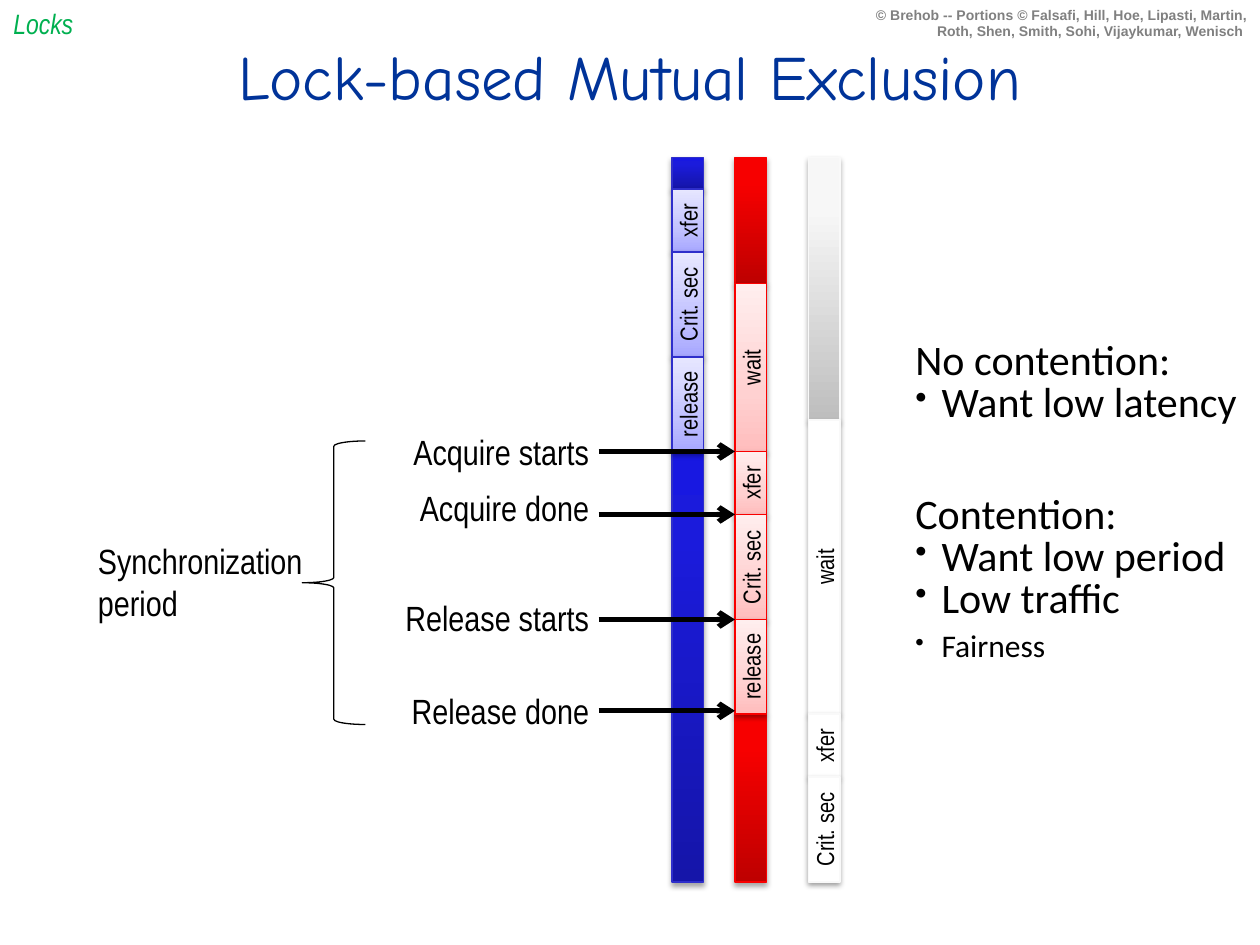
import copy
from dataclasses import dataclass
from typing import Optional

import lxml.etree
import pptx
import pptx.dml.color
import pptx.enum.shapes
import pptx.enum.text
import pptx.oxml
import pptx.oxml.ns
import pptx.util

COLUMNS = 120
SLIDE_WIDTH = pptx.util.Inches(10)
SLIDE_HEIGHT = pptx.util.Inches(7.5)
ALIGN = pptx.enum.text.PP_ALIGN
ANCHOR = pptx.enum.text.MSO_ANCHOR
SHAPES = pptx.enum.shapes.MSO_SHAPE
NARROW = "Arial Narrow"
BLACK = "000000"
BAR_WIDTH = 3


@dataclass(frozen=True)
class Style:
    font: str = NARROW
    size: float = 20
    color: str = BLACK
    bold: bool = False
    italic: bool = False


@dataclass(frozen=True)
class Box:
    left: float
    top: float
    width: float
    height: float


@dataclass(frozen=True)
class Thread:
    column: int
    line: str
    solid: tuple
    light: tuple
    running: tuple
    phases: tuple


@dataclass(frozen=True)
class Event:
    text: str
    label_row: float
    arrow_row: float


@dataclass(frozen=True)
class Note:
    text: str
    bullet: bool = False
    space_before: float = 0
    size: float = 24


THREADS = (
    Thread(64, "2E2ECB", ("1515A9", "1B1BDC", "1818E1"), ("A7A7FF", "C1C1FF", "E7E7FF"),
           ((15, 18), (43, 84)),
           (("xfer", 18, 24), ("Crit. sec", 24, 34), ("release", 34, 43))),
    Thread(70, "F90000", ("BE0000", "F70000", "F80000"), ("FFBDBD", "FFD1D1", "FFEEEE"),
           ((68, 84), (15, 27)),
           (("wait", 27, 43), ("xfer", 43, 49), ("Crit. sec", 49, 59), ("release", 59, 68))),
    Thread(77, "F9F9F9", ("BEBEBE", "F7F7F7", "F8F8F8"), ("FFFFFF",),
           ((15, 40),),
           (("wait", 40, 68), ("xfer", 68, 74), ("Crit. sec", 74, 84))),
)

EVENTS = (
    Event("Acquire starts", 43.1, 43),
    Event("Acquire done", 48.4, 49),
    Event("Release starts", 58.9, 59),
    Event("Release done", 67.7, 67.7),
)

NOTES = (
    Note("No contention:", space_before=15),
    Note("Want low latency", bullet=True),
    Note("Contention:", space_before=40),
    Note("Want low period", bullet=True),
    Note("Low traffic", bullet=True),
    Note("Fairness", bullet=True, size=18),
)


def grid(cells: float) -> int:
    return round(SLIDE_WIDTH * cells / COLUMNS)


def place(box: Box) -> tuple:
    return grid(box.left), grid(box.top), grid(box.width), grid(box.height)


def rgb(color: str):
    return pptx.dml.color.RGBColor.from_string(color)


def add_run(paragraph, text: str, style: Style) -> None:
    run = paragraph.add_run()
    run.text = text
    run.font.name = style.font
    run.font.size = pptx.util.Pt(style.size)
    run.font.bold = style.bold
    run.font.italic = style.italic
    run.font.color.rgb = rgb(style.color)


def add_text(slide, box: Box, lines: tuple, style: Style, wrap: bool = False) -> None:
    frame = slide.shapes.add_textbox(*place(box)).text_frame
    frame.word_wrap = wrap
    for index, (text, alignment) in enumerate(lines):
        paragraph = frame.add_paragraph() if index else frame.paragraphs[0]
        paragraph.alignment = alignment
        add_run(paragraph, text, style)


def set_fill(shape, colors: tuple, middle: float) -> None:
    if len(colors) == 1:
        shape.fill.solid()
        shape.fill.fore_color.rgb = rgb(colors[0])
        return
    shape.fill.gradient()
    shape.fill.gradient_angle = 90
    stops = shape._element.spPr.find(".//" + pptx.oxml.ns.qn("a:gsLst"))
    stops.append(copy.deepcopy(stops[0]))
    for stop, color, position in zip(shape.fill.gradient_stops, colors, (0, middle, 1)):
        stop.color.rgb = rgb(color)
        stop.position = position


def add_shadow(shape, opacity: int, distance: float) -> None:
    shape.shadow.inherit = False
    effects = shape._element.spPr.find(pptx.oxml.ns.qn("a:effectLst"))
    shadow = lxml.etree.SubElement(
        effects, pptx.oxml.ns.qn("a:outerShdw"),
        blurRad=str(pptx.util.Pt(3.1)), dist=str(pptx.util.Pt(distance)),
        dir="5400000", rotWithShape="0")
    color = lxml.etree.SubElement(shadow, pptx.oxml.ns.qn("a:srgbClr"), val=BLACK)
    lxml.etree.SubElement(color, pptx.oxml.ns.qn("a:alpha"), val=str(opacity * 1000))


def add_segment(slide, thread: Thread, top: int, bottom: int, text: Optional[str] = None) -> None:
    box = Box(thread.column, top, BAR_WIDTH, bottom - top)
    shape = slide.shapes.add_shape(SHAPES.RECTANGLE, *place(box))
    shape.line.color.rgb = rgb(thread.line)
    shape.line.width = pptx.util.Pt(0.75)
    if text is None:
        set_fill(shape, thread.solid, 0.8)
        add_shadow(shape, 35, 1.8)
        return
    set_fill(shape, thread.light, 0.35)
    add_shadow(shape, 38, 1.6)
    frame = shape.text_frame
    frame.margin_left = frame.margin_right = frame.margin_top = frame.margin_bottom = 0
    frame.vertical_anchor = ANCHOR.MIDDLE
    frame._txBody.bodyPr.set("vert", "vert270")
    frame.paragraphs[0].alignment = ALIGN.CENTER
    add_run(frame.paragraphs[0], text, Style(size=14))


def add_thread(slide, thread: Thread) -> None:
    for top, bottom in thread.running:
        add_segment(slide, thread, top, bottom)
    for text, top, bottom in thread.phases:
        add_segment(slide, thread, top, bottom, text)


def add_event(slide, event: Event) -> None:
    label = Box(35.9, event.label_row - 2.65, 21.4, 5.3)
    add_text(slide, label, ((event.text, ALIGN.RIGHT),), Style())
    row = grid(event.arrow_row)
    arrow = slide.shapes.add_connector(
        pptx.enum.shapes.MSO_CONNECTOR.STRAIGHT, grid(57), row, grid(70), row)
    arrow.line.color.rgb = rgb(BLACK)
    arrow.line.width = pptx.util.Pt(3)
    lxml.etree.SubElement(arrow.line._get_or_add_ln(), pptx.oxml.ns.qn("a:tailEnd"), type="arrow")
    lxml.etree.SubElement(arrow._element.spPr, pptx.oxml.ns.qn("a:effectLst"))


def add_brace(slide, box: Box) -> None:
    brace = slide.shapes.add_shape(SHAPES.LEFT_BRACE, *place(box))
    brace.shadow.inherit = False
    brace.fill.background()
    brace.line.color.rgb = rgb(BLACK)
    brace.line.width = pptx.util.Pt(0.75)


def add_notes(slide, box: Box, notes: tuple) -> None:
    frame = slide.shapes.add_textbox(*place(box)).text_frame
    frame.word_wrap = True
    for index, note in enumerate(notes):
        paragraph = frame.add_paragraph() if index else frame.paragraphs[0]
        paragraph.line_spacing = pptx.util.Pt(24)
        paragraph.space_before = pptx.util.Pt(note.space_before)
        properties = paragraph._p.get_or_add_pPr()
        properties.set("marL", str(grid(2.5)))
        properties.set("indent", str(-grid(2.5)))
        if note.bullet:
            lxml.etree.SubElement(properties, pptx.oxml.ns.qn("a:buSzPct"), val="80000")
            lxml.etree.SubElement(properties, pptx.oxml.ns.qn("a:buChar"), char="•")
        add_run(paragraph, note.text, Style("Calibri", note.size))


def main() -> None:
    presentation = pptx.Presentation()
    presentation.slide_width = SLIDE_WIDTH
    presentation.slide_height = SLIDE_HEIGHT
    slide = presentation.slides.add_slide(presentation.slide_layouts[6])
    credit = ("© Brehob -- Portions © Falsafi, Hill, Hoe, Lipasti, Martin, "
              "Roth, Shen, Smith, Sohi, Vijaykumar, Wenisch ")
    add_text(slide, Box(82, 0, 38, 4.4), ((credit, ALIGN.RIGHT),),
             Style("Arial", 8, "808080", bold=True), wrap=True)
    add_text(slide, Box(4.5, 3, 111, 8), (("Lock-based Mutual Exclusion", ALIGN.CENTER),),
             Style("Comic Neue", 36, "003399"), wrap=True)
    for thread in THREADS:
        add_thread(slide, thread)
    for event in EVENTS:
        add_event(slide, event)
    add_brace(slide, Box(28.8, 42, 6, 27))
    add_text(slide, Box(5.9, 50.8, 24.1, 9.2),
             (("Synchronization", ALIGN.RIGHT), ("period", ALIGN.LEFT)), Style())
    add_notes(slide, Box(86, 32, 39.8, 19), NOTES)
    add_text(slide, Box(0.1, 0, 8.2, 4.4), (("Locks", ALIGN.LEFT),),
             Style(size=16, color="00B050", italic=True))
    presentation.save("out.pptx")


if __name__ == "__main__":
    main()
